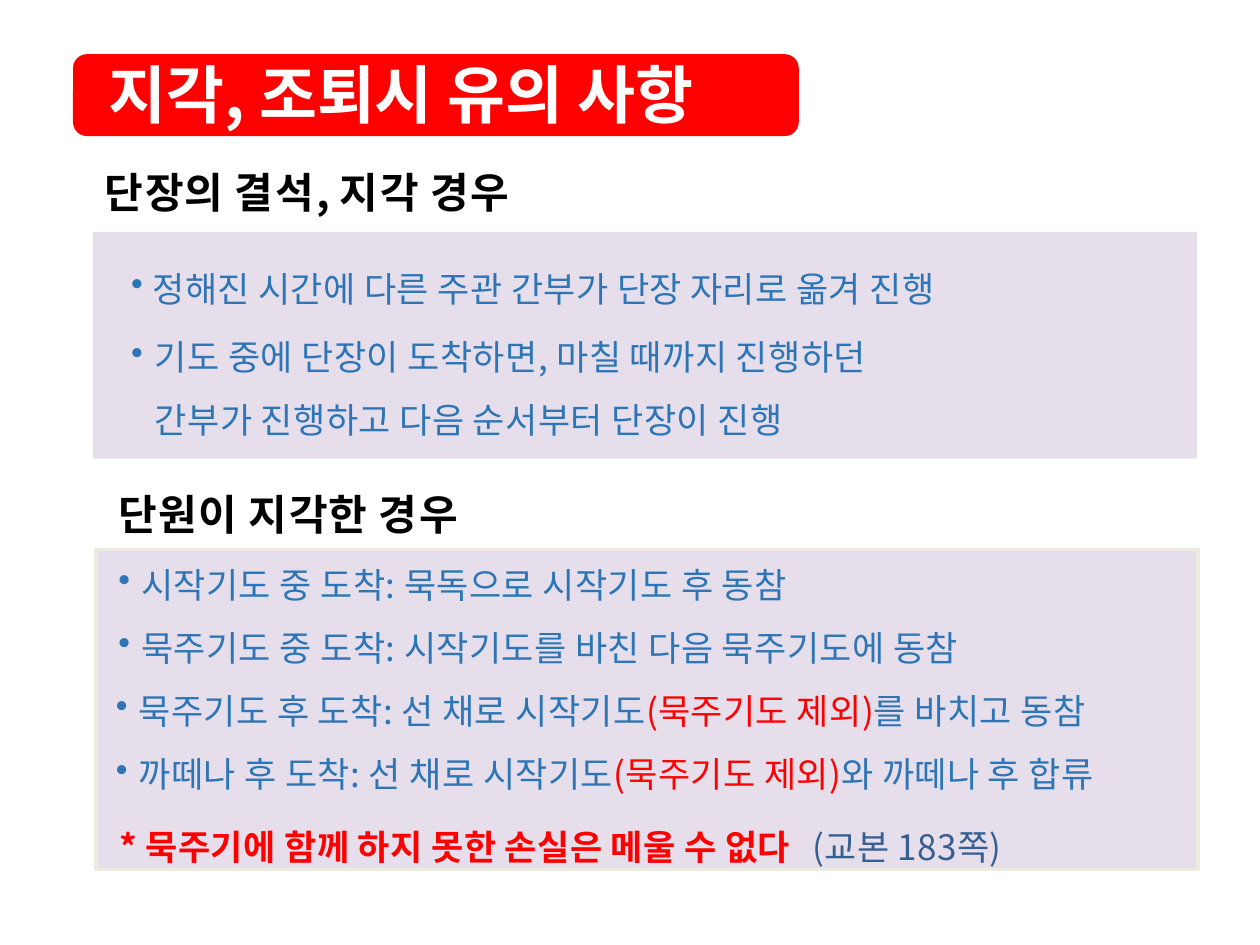
from lxml import etree
from pptx import Presentation
from pptx import util as u
from pptx.dml.color import RGBColor
from pptx.enum import shapes, text
from pptx.oxml.ns import qn

FONT = "Noto Sans CJK KR"
RED, BLUE, NAVY, LILAC, CREAM = "FF0000", "2D75B6", "375F92", "E6DFEB", "EDEBE0"
WHITE, BLACK = "FFFFFF", "000000"


def rgb(value):
    return RGBColor.from_string(value)


class SlideBuilder:
    """Holds the text style and the slide being built."""

    def __init__(self, slide, font):
        self.s = slide
        self.font = font

    def frame(self, sp, top):
        tf = sp.text_frame
        tf.word_wrap = True
        tf.auto_size = text.MSO_AUTO_SIZE.NONE
        tf.vertical_anchor = text.MSO_ANCHOR.TOP
        tf.margin_left = tf.margin_right = tf.margin_bottom = 0
        tf.margin_top = u.Inches(top)
        return tf

    def place(self, sp, left, top, width, height):
        sp.left, sp.top = u.Inches(left), u.Inches(top)
        sp.width, sp.height = u.Inches(width), u.Inches(height)

    def runs(self, p, parts, size, color, bold=False):
        """Each part is (text, letter spacing) plus an optional colour and bold flag."""
        for words, spacing, *extra in parts:
            r = p.add_run()
            r.text = words
            f = r.font
            f.size, f.name = u.Pt(size), self.font
            f.color.rgb = rgb(extra[0] if extra else color)
            f.bold = extra[1] if len(extra) > 1 else bold
            rPr = r._r.get_or_add_rPr()
            rPr.set("spc", str(round(spacing * 100)))
            etree.SubElement(rPr, qn("a:ea")).set("typeface", self.font)

    def title(self, parts, *box):
        sp = self.s.shapes.title
        self.place(sp, *box)
        p = self.frame(sp, 0.01).paragraphs[0]
        p.alignment = text.PP_ALIGN.LEFT
        self.runs(p, parts, 36, WHITE, True)
        self.s.shapes._spTree.append(sp._element)  # in front of its bar

    def heading(self, parts, *box):
        sp = self.s.shapes.add_textbox(*map(u.Inches, box))
        p = self.frame(sp, 0.01).paragraphs[0]
        self.runs(p, parts, 24, BLACK, True)

    def block(self, kind, fill, *box, line=None):
        sp = self.s.shapes.add_shape(kind, *map(u.Inches, box))
        sp.shadow.inherit = False
        sp.fill.solid()
        sp.fill.fore_color.rgb = rgb(fill)
        if line:
            sp.line.color.rgb = rgb(line)
            sp.line.width = u.Pt(2)
        else:
            sp.line.fill.background()
        return sp

    def paragraph(self, tf, parts, left, hang=0, right=0, before=0,
                  leading=None, tab=None):
        p = tf.paragraphs[0]
        if p.runs:
            p = tf.add_paragraph()
        p.alignment = text.PP_ALIGN.LEFT
        if before:
            p.space_before = u.Pt(before)
        if leading:
            p.line_spacing = u.Pt(leading)
        pPr = p._p.get_or_add_pPr()
        for name, value in (("marL", left), ("marR", right), ("indent", -hang)):
            pPr.set(name, str(u.Inches(value)))
        if hang:
            etree.SubElement(pPr, qn("a:buChar")).set("char", "•")
        if tab:
            stop = etree.SubElement(etree.SubElement(pPr, qn("a:tabLst")), qn("a:tab"))
            stop.set("pos", str(u.Inches(tab)))
            stop.set("algn", "l")
        self.runs(p, parts, 20, BLUE)


def main():
    prs = Presentation()
    prs.slide_width, prs.slide_height = u.Inches(10), u.Inches(7.5)
    b = SlideBuilder(prs.slides.add_slide(prs.slide_layouts[5]), FONT)
    rect = shapes.MSO_SHAPE.RECTANGLE

    bar = b.block(shapes.MSO_SHAPE.ROUNDED_RECTANGLE, RED, 0.58, 0.43, 5.76, 0.65)
    bar.adjustments[0] = 0.17
    b.title([("지각, 조퇴시 유의 ", 0), ("사항", 0.1)], 0.86, 0.43, 5.19, 0.63)

    leader = b.frame(b.block(rect, LILAC, 0.74, 1.84, 8.76, 1.8), 0.28)
    b.paragraph(leader, [("정해진 시간에 다른 주관 간부가 단장 자리로 옮겨 진행", 0.2)],
                0.47, hang=0.17)
    b.paragraph(leader, [("기도 중에 단장이 도착하면, 마칠 때까지 진행하던 "
                          "간부가 진행하고 다음 순서부터 단장이 진행", 0.2)],
                0.49, hang=0.19, right=1.9, before=3.1, leading=36.1)

    member = b.frame(b.block(rect, LILAC, 0.76, 4.36, 8.75, 2.54, line=CREAM), 0.11)
    except_rosary = [("(", -0.1, RED), ("묵주기도 제외", 0.2, RED), (")", -0.1, RED)]
    arrivals = [
        (0.36, [("시작기도 중 도착: 묵독으로 시작기도 후 동참", 0.2)]),
        (0.36, [("묵주기도 중 도착: 시작기도를 바친 다음 묵주기도에 동참", 0.2)]),
        (0.34, [("묵주기도 후 도착: 선 채로 시작기도", 0.2), *except_rosary,
                ("를 바치고 동참", 0.2)]),
        (0.34, [("까떼나 후 도착: 선 채로 시작기도", 0.2), *except_rosary,
                ("와 까떼나 후 합류", 0.2)]),
    ]
    for i, (left, parts) in enumerate(arrivals):
        b.paragraph(member, parts, left, hang=0.18, before=12.1 if i else 0)
    b.paragraph(member, [("* ", 0.1, RED, True),
                         ("묵주기에 함께 하지 못한 손실은 메울 수 없다\t", 0.2, RED, True),
                         ("(교본 ", 0.1, NAVY), ("183쪽)", 0.2, NAVY)],
                0.19, before=17.3, tab=6.29)

    b.heading([("단", 1.1), ("원이 ", 0.5), ("지", 1.1), ("각한 ", 0.5), ("경우", 1.2)],
              0.94, 3.87, 2.9, 0.43)
    b.heading([("단", 1.1), ("장의 ", 0.5), ("결석", 1.2), (", ", 0.1), ("지", 1.2),
               ("각 ", 0.5), ("경우", 1.2)], 0.83, 1.31, 3.44, 0.43)

    prs.save("out.pptx")


if __name__ == "__main__":
    main()
